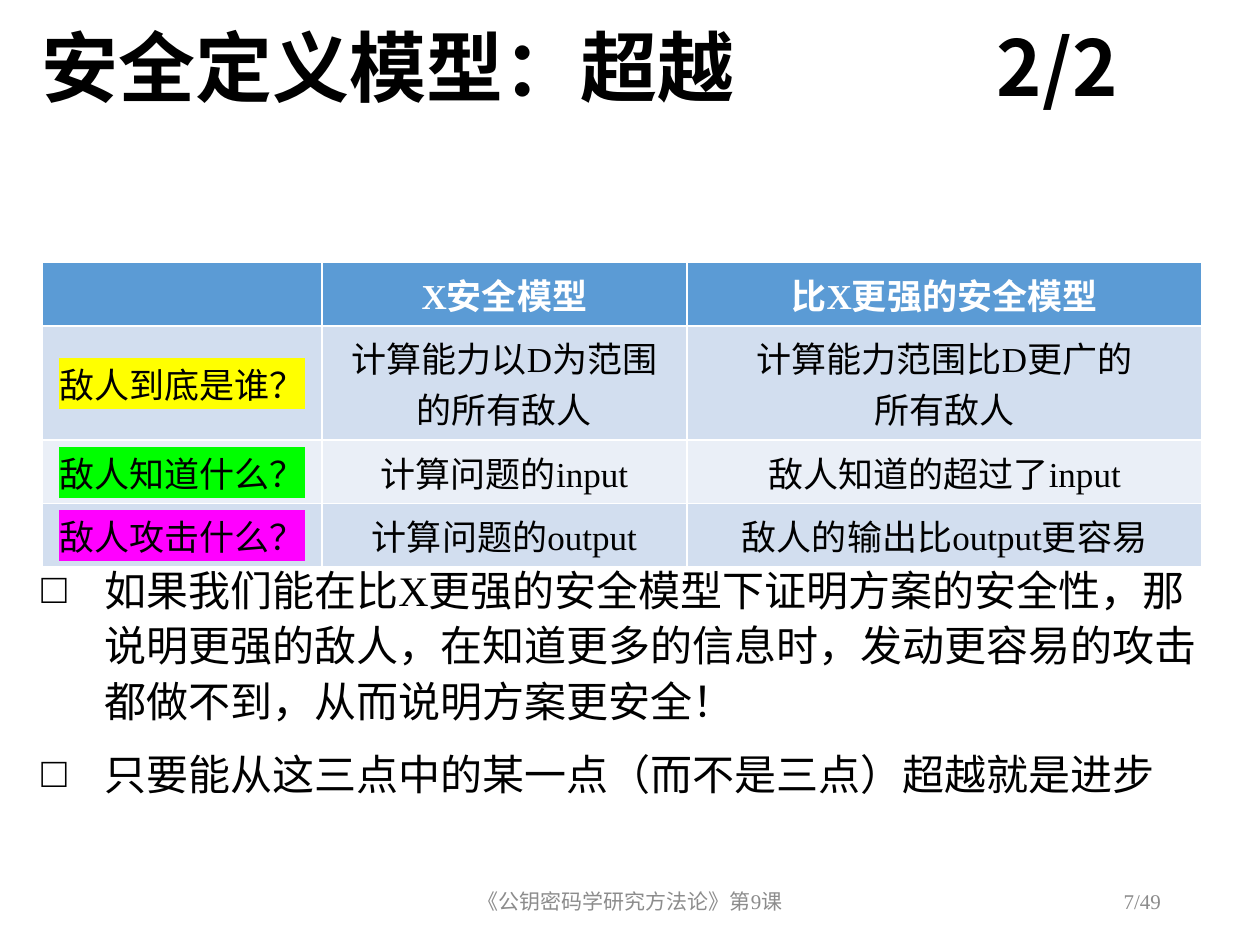
from lxml import etree
from pptx import Presentation
from pptx.dml.color import RGBColor
from pptx.enum import text
from pptx.oxml import ns
from pptx.util import Pt

BLACK = RGBColor(0x00, 0x00, 0x00)
WHITE = RGBColor(0xFF, 0xFF, 0xFF)
GRAY = RGBColor(0x8C, 0x8C, 0x8C)
BLUE = RGBColor(0x5B, 0x9B, 0xD5)
BANDS = [RGBColor(0xD2, 0xDE, 0xEF), RGBColor(0xEA, 0xEF, 0xF7)]
YELLOW = RGBColor(0xFF, 0xFF, 0x00)
GREEN = RGBColor(0x00, 0xFF, 0x00)
PINK = RGBColor(0xFF, 0x00, 0xFF)

SANS = "Noto Sans CJK SC"
SERIF = "Times New Roman"
LEFT, CENTER, RIGHT = (text.PP_ALIGN.LEFT, text.PP_ALIGN.CENTER,
                       text.PP_ALIGN.RIGHT)
TOP, MIDDLE = text.MSO_ANCHOR.TOP, text.MSO_ANCHOR.MIDDLE


def add(parent, tag, **attrs):
    return etree.SubElement(parent, ns.qn(tag), attrs)


class Deck:
    """Holds the type style and the current slide."""

    def __init__(self, wide, high):
        self.show = Presentation()
        self.show.slide_width, self.show.slide_height = Pt(wide), Pt(high)
        self.slide = self.show.slides.add_slide(self.show.slide_layouts[1])

    def place(self, shape, box, anchor):
        shape.left, shape.top, shape.width, shape.height = map(Pt, box)
        frame = shape.text_frame
        frame.word_wrap = True
        frame.auto_size = text.MSO_AUTO_SIZE.NONE
        frame.vertical_anchor = anchor
        return frame

    def style(self, para, size, color, align=LEFT, face=SERIF, bold=False):
        para.alignment = align
        font = para.font
        font.name, font.size, font.bold = face, Pt(size), bold
        font.color.rgb = color

    def title(self, words, box, stop):
        frame = self.place(self.slide.shapes.title, box, TOP)
        frame.text = words
        para = frame.paragraphs[0]
        para.line_spacing = 0.9
        tabs = add(para._p.get_or_add_pPr(), "a:tabLst")
        add(tabs, "a:tab", pos=str(Pt(stop)), algn="l")
        self.style(para, 44, BLACK, face=SANS, bold=True)

    def body(self, items, box):
        frame = self.place(self.slide.placeholders[1], box, TOP)
        frame.text = "\n".join(items)
        for i, para in enumerate(frame.paragraphs):
            para.line_spacing = 1.1
            para.space_before = Pt(10 if i else 0)
            props = para._p.get_or_add_pPr()
            props.set("marL", str(Pt(36)))
            props.set("indent", str(-Pt(36)))
            add(props, "a:buFont", typeface=SERIF)
            add(props, "a:buChar", char="□")
            self.style(para, 24, BLACK)

    def label(self, words, box, align):
        shape = self.slide.shapes.add_textbox(*map(Pt, box))
        frame = self.place(shape, box, MIDDLE)
        frame.text = words
        self.style(frame.paragraphs[0], 12, GRAY, align)

    def table(self, rows, marks, box, widths):
        # The default table style supplies the white rules between cells
        grid = self.slide.shapes.add_table(
            len(rows), len(widths), *map(Pt, box)).table
        for col, width in zip(grid.columns, widths):
            col.width = Pt(width)
        for r, row in enumerate(rows):
            for c, words in enumerate(row):
                cell = grid.cell(r, c)
                cell.fill.solid()
                cell.fill.fore_color.rgb = BANDS[(r - 1) % 2] if r else BLUE
                cell.vertical_anchor = TOP if c else MIDDLE
                cell.text = words
                for para in cell.text_frame.paragraphs:
                    self.style(para, 20, BLACK if r else WHITE, CENTER,
                               bold=r == 0)
                if r and c == 0:
                    self.mark(cell.text_frame.paragraphs[0], marks[r - 1])

    def mark(self, para, color):
        for run in para.runs:
            light = add(run._r.get_or_add_rPr(), "a:highlight")
            add(light, "a:srgbClr", val=str(color))


def main():
    deck = Deck(720, 540)

    # Title, with the part number at a tab stop
    deck.title("安全定义模型：超越\t2/2", (16.5, 13.5, 689, 66), 546)

    # Comparison of the two security models
    deck.table(
        [["", "X安全模型", "比X更强的安全模型"],
         ["敌人到底是谁？", "计算能力以D为范围的所有敌人",
          "计算能力范围比D更广的\n所有敌人"],
         ["敌人知道什么？", "计算问题的input", "敌人知道的超过了input"],
         ["敌人攻击什么？", "计算问题的output", "敌人的输出比output更容易"]],
        [YELLOW, GREEN, PINK], (24, 150, 663, 121), [160, 208.5, 294.5])

    # Conclusions
    deck.body(
        ["如果我们能在比X更强的安全模型下证明方案的安全性，那说明更强的敌人，"
         "在知道更多的信息时，发动更容易的攻击都做不到，从而说明方案更安全！",
         "只要能从这三点中的某一点（而不是三点）超越就是进步"],
        (16.5, 316, 689, 156))

    # Footer and page number
    deck.label("《公钥密码学研究方法论》第9课", (238.5, 500.5, 243, 29), CENTER)
    deck.label("7/49", (508.5, 500.5, 162, 29), RIGHT)

    deck.show.save("out.pptx")


if __name__ == "__main__":
    main()
